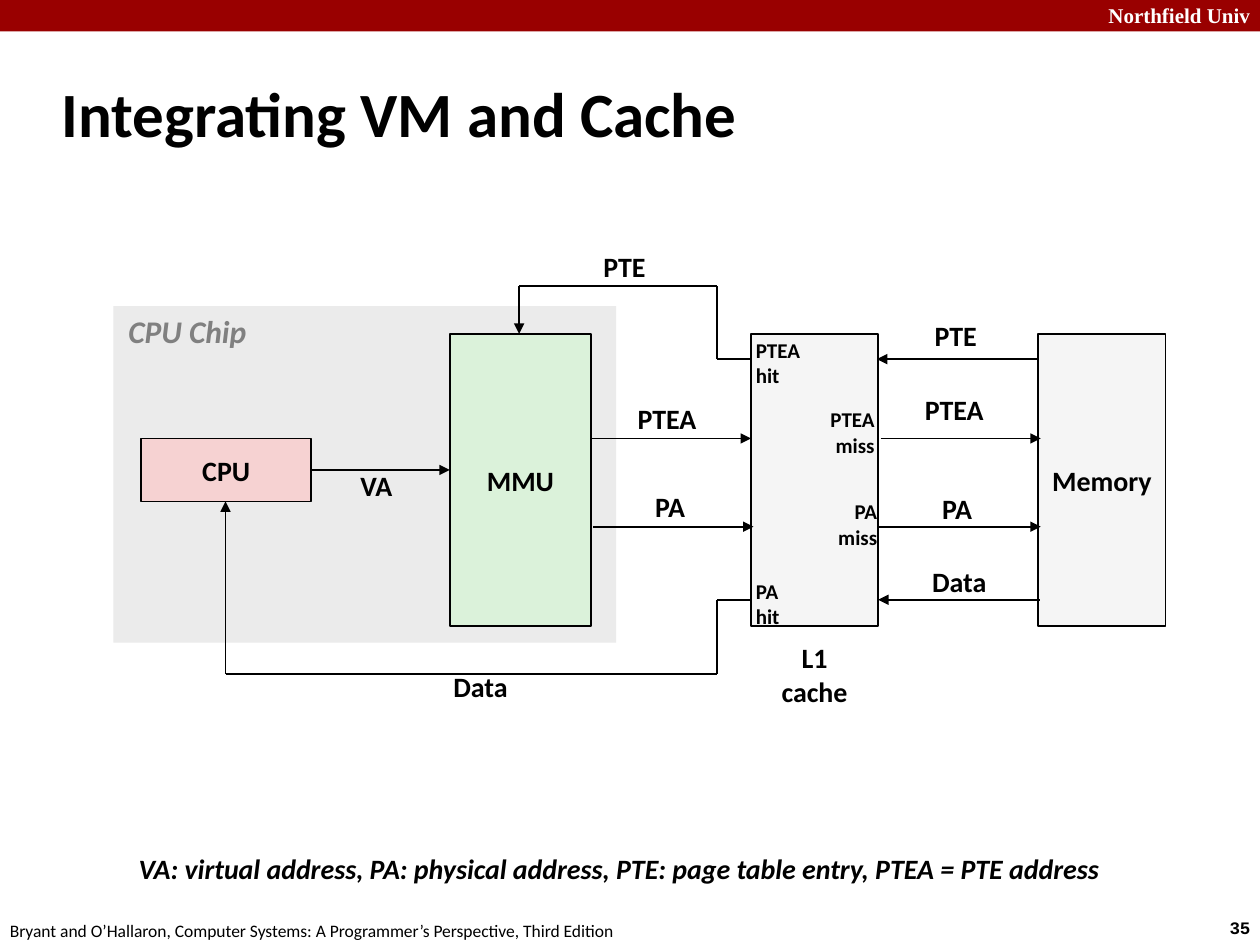
from dataclasses import dataclass
from itertools import pairwise

from lxml.etree import SubElement
from pptx import Presentation
from pptx.dml.color import RGBColor
from pptx.enum.shapes import MSO_CONNECTOR, MSO_SHAPE
from pptx.enum.text import MSO_ANCHOR as Anchor, PP_ALIGN as Align
from pptx.oxml.ns import qn
from pptx.util import Inches, Pt


@dataclass(frozen=True)
class Theme:
    font: str = "Calibri"
    header_font: str = "Times New Roman"
    number_font: str = "Courier New"
    black: str = "000000"
    white: str = "FFFFFF"
    muted: str = "808080"
    band: str = "990000"
    chip: str = "EBEBEB"
    cpu: str = "F6D2D2"
    mmu: str = "DBF2DA"
    storage: str = "F5F5F5"
    title_size: int = 36
    chip_size: int = 18
    label_size: int = 16
    small_size: int = 12
    footer_size: int = 10
    line_width: int = 1


THEME = Theme()

# Shared positions of the diagram, in inches
BLOCK_TOP, BLOCK_HEIGHT = 2.65, 2.32
CACHE_LEFT, CACHE_RIGHT, MEMORY_LEFT = 5.96, 6.97, 8.24
BEND_X, MMU_X, CPU_X = 5.69, 4.12, 1.79
PTE_Y, PTEA_Y, PA_Y, DATA_Y = 2.85, 3.48, 4.18, 4.76
TOP_Y, BOTTOM_Y = 2.27, 5.35


def write(text_frame, text, size=THEME.label_size, color=THEME.black,
          font=THEME.font, bold=True, italic=False, align=Align.LEFT,
          spacing=None):
    """Fill a text frame, one paragraph for each line of text."""
    for index, line in enumerate(text.split("\n")):
        paragraph = (text_frame.add_paragraph() if index
                     else text_frame.paragraphs[0])
        paragraph.alignment = align
        if spacing:
            paragraph.line_spacing = spacing
        run = paragraph.add_run()
        run.text = line
        run.font.name = font
        run.font.size = Pt(size)
        run.font.bold = bold
        run.font.italic = italic
        run.font.color.rgb = RGBColor.from_string(color)


def add_label(slide, box, text, anchor=Anchor.MIDDLE, wrap=False, **style):
    shape = slide.shapes.add_textbox(*map(Inches, box))
    text_frame = shape.text_frame
    text_frame.word_wrap = wrap
    text_frame.vertical_anchor = anchor
    write(text_frame, text, **style)
    return text_frame


def add_tight_label(slide, box, text, **style):
    """Add a label with narrow margins and reduced line spacing."""
    text_frame = add_label(slide, box, text, Anchor.TOP, spacing=0.85, **style)
    text_frame.margin_left = text_frame.margin_right = Inches(0.07)
    text_frame.margin_top = text_frame.margin_bottom = Inches(0.03)


def add_block(slide, box, fill, text="", outlined=True):
    shape = slide.shapes.add_shape(MSO_SHAPE.RECTANGLE, *map(Inches, box))
    shape.shadow.inherit = False
    shape.fill.solid()
    shape.fill.fore_color.rgb = RGBColor.from_string(fill)
    if outlined:
        shape.line.color.rgb = RGBColor.from_string(THEME.black)
        shape.line.width = Pt(THEME.line_width)
    else:
        shape.line.fill.background()
    if text:
        shape.text_frame.word_wrap = False
        shape.text_frame.vertical_anchor = Anchor.MIDDLE
        write(shape.text_frame, text, align=Align.CENTER)


def add_line(slide, start, end):
    connector = slide.shapes.add_connector(
        MSO_CONNECTOR.STRAIGHT, *map(Inches, (*start, *end)))
    connector.line.color.rgb = RGBColor.from_string(THEME.black)
    connector.line.width = Pt(THEME.line_width)
    SubElement(connector._element.spPr, qn("a:effectLst"))
    return connector


def add_arrow(slide, *points):
    """Join the points with straight lines and put an arrowhead at the last."""
    for start, end in pairwise(points):
        connector = add_line(slide, start, end)
    outline = connector._element.spPr.find(qn("a:ln"))
    SubElement(outline, qn("a:tailEnd"), type="triangle")


def add_frame(slide):
    """Add the header band, title, footer and page number."""
    add_block(slide, (0, 0, 10, 0.25), THEME.band, outlined=False)
    add_label(slide, (8.64, -0.03, 1.38, 0.3), "Northfield Univ",
              Anchor.TOP, wrap=True, size=THEME.small_size, color=THEME.white,
              font=THEME.header_font, align=Align.RIGHT)
    add_label(slide, (9.66, 7.23, 0.45, 0.27), "35", Anchor.TOP,
              size=THEME.footer_size, font=THEME.number_font)
    add_label(slide, (-0.02, 7.25, 5.08, 0.27),
              "Bryant and O’Hallaron, Computer Systems: "
              "A Programmer’s Perspective, Third Edition",
              Anchor.TOP, size=THEME.footer_size, bold=False)
    title = slide.shapes.title
    title.left, title.top, title.width, title.height = map(
        Inches, (0.39, 0.48, 8.3, 0.83))
    title.text_frame.vertical_anchor = Anchor.MIDDLE
    write(title.text_frame, "Integrating VM and Cache", size=THEME.title_size)


def add_blocks(slide):
    add_block(slide, (0.9, 2.43, 3.99, 2.67), THEME.chip, outlined=False)
    add_block(slide, (1.12, 3.48, 1.35, 0.5), THEME.cpu, "CPU")
    for left, width, fill, text in (
            (3.57, 1.12, THEME.mmu, "MMU"),
            (CACHE_LEFT, 1.01, THEME.storage, ""),
            (MEMORY_LEFT, 1.01, THEME.storage, "Memory")):
        add_block(slide, (left, BLOCK_TOP, width, BLOCK_HEIGHT), fill, text)


def add_arrows(slide):
    for start_x, end_x, y in (
            (2.47, 3.57, 3.73),
            (4.69, CACHE_LEFT, PTEA_Y),
            (4.71, 5.98, PA_Y),
            (MEMORY_LEFT, 6.96, PTE_Y),
            (6.99, 8.26, PTEA_Y),
            (CACHE_RIGHT, 8.26, PA_Y),
            (8.25, CACHE_RIGHT, DATA_Y)):
        add_arrow(slide, (start_x, y), (end_x, y))
    add_arrow(slide, (CACHE_LEFT, PTE_Y), (BEND_X, PTE_Y), (BEND_X, TOP_Y),
              (MMU_X, TOP_Y), (MMU_X, BLOCK_TOP))
    add_arrow(slide, (CACHE_LEFT, DATA_Y), (BEND_X, DATA_Y),
              (BEND_X, BOTTOM_Y), (CPU_X, BOTTOM_Y), (CPU_X, 3.98))


def add_labels(slide):
    for left, top, width, text in (
            (2.79, 3.73, 0.42, "VA"), (4.99, 3.2, 0.62, "PTEA"),
            (5.13, 3.9, 0.38, "PA"), (7.27, 3.13, 0.62, "PTEA")):
        add_tight_label(slide, (left, top, width, 0.29), text)
    for left, top, width, text in (
            (4.69, 1.93, 0.54, "PTE"), (3.5, 5.26, 0.64, "Data"),
            (7.32, 2.48, 0.54, "PTE"), (7.38, 3.85, 0.44, "PA"),
            (7.3, 4.43, 0.64, "Data")):
        add_label(slide, (left, top, width, 0.37), text)
    for left, top, width, text, align in (
            (5.9, 2.63, 0.55, "PTEA\nhit", Align.LEFT),
            (5.9, 4.54, 0.39, "PA\nhit", Align.LEFT),
            (6.49, 3.18, 0.55, "PTEA\nmiss", Align.RIGHT),
            (6.54, 3.91, 0.52, "PA\nmiss", Align.RIGHT)):
        add_label(slide, (left, top, width, 0.5), text,
                  size=THEME.small_size, align=align)
    add_label(slide, (6.1, 5.03, 0.73, 0.64), "L1\ncache", align=Align.CENTER)
    add_label(slide, (0.92, 2.43, 1.21, 0.4), "CPU Chip", Anchor.TOP,
              size=THEME.chip_size, color=THEME.muted, italic=True)
    add_tight_label(slide, (1.03, 6.77, 7.92, 0.29),
                    "VA: virtual address, PA: physical address, "
                    "PTE: page table entry, PTEA = PTE address", italic=True)


def main():
    presentation = Presentation()
    presentation.slide_width = Inches(10)
    presentation.slide_height = Inches(7.5)
    slide = presentation.slides.add_slide(presentation.slide_layouts[5])
    add_frame(slide)
    add_blocks(slide)
    add_arrows(slide)
    add_labels(slide)
    presentation.save("out.pptx")


if __name__ == "__main__":
    main()
